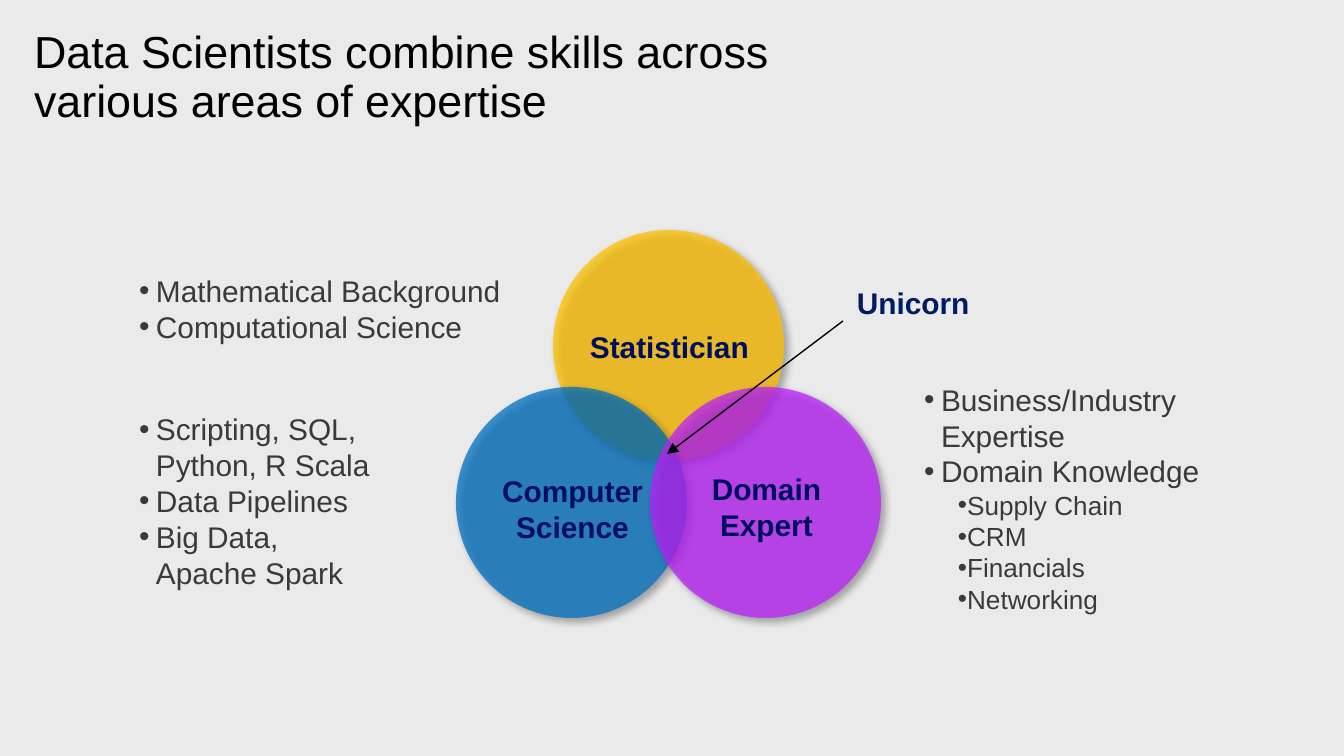
import copy

import pptx
import pptx.dml.color
import pptx.enum.shapes
import pptx.enum.text
import pptx.oxml
import pptx.oxml.ns
import pptx.util
from lxml import etree

PX = 914400 / 134.4
RGBColor = pptx.dml.color.RGBColor
BACKGROUND = RGBColor(0xEA, 0xEA, 0xEA)
BLACK = RGBColor(0x00, 0x00, 0x00)
GREY = RGBColor(0x3A, 0x3A, 0x3A)
NAVY = RGBColor(0x00, 0x0E, 0x5E)
UNICORN_BLUE = RGBColor(0x00, 0x1D, 0x64)
YELLOW = RGBColor(0xFF, 0xC0, 0x00)
BLUE = RGBColor(0x00, 0x70, 0xC0)
PURPLE = RGBColor(0xBA, 0x22, 0xFB)

LEFT = pptx.enum.text.PP_ALIGN.LEFT
CENTER = pptx.enum.text.PP_ALIGN.CENTER
TOP = pptx.enum.text.MSO_ANCHOR.TOP
MIDDLE = pptx.enum.text.MSO_ANCHOR.MIDDLE

MATHEMATICS = [(0, "Mathematical Background"), (0, "Computational Science")]
COMPUTING = [
    (0, "Scripting, SQL,\nPython, R Scala"),
    (0, "Data Pipelines"),
    (0, "Big Data,\nApache Spark"),
]
BUSINESS = [
    (0, "Business/Industry\nExpertise"),
    (0, "Domain Knowledge"),
    (1, "Supply Chain"),
    (1, "CRM"),
    (1, "Financials"),
    (1, "Networking"),
]


def emu(*lengths):
    return [pptx.util.Emu(round(length * PX)) for length in lengths]


def qn(tag):
    return pptx.oxml.ns.qn(tag)


def place(part, box):
    part.left, part.top, part.width, part.height = emu(*box)


def write(frame, lines, sizes=(16,), color=GREY, bold=False, align=LEFT,
          anchor=MIDDLE, inset=(3, 3), spacing=1.0, bullets=False):
    frame.word_wrap = True
    frame.auto_size = pptx.enum.text.MSO_AUTO_SIZE.NONE
    frame.vertical_anchor = anchor
    frame.margin_left, frame.margin_top = emu(*inset)
    frame.margin_right, frame.margin_bottom = emu(*inset)
    for number, (level, text) in enumerate(lines):
        paragraph = frame.add_paragraph() if number else frame.paragraphs[0]
        paragraph.text = text
        paragraph.level = level
        paragraph.alignment = align
        paragraph.line_spacing = spacing
        paragraph.space_before = paragraph.space_after = pptx.util.Pt(0)
        if bullets:
            properties = paragraph._p.get_or_add_pPr()
            margin, indent = emu(17, 17 if level else -17)
            properties.set("marL", str(margin))
            properties.set("indent", str(indent))
            etree.SubElement(properties, qn("a:buChar"), char="•")
        for run in paragraph.runs:
            run.font.name = "Arial"
            run.font.size = pptx.util.Pt(sizes[level])
            run.font.bold = bold
            run.font.color.rgb = color
        for line_break in paragraph._p.findall(qn("a:br")):
            line_break.append(copy.deepcopy(paragraph.runs[0]._r.rPr))


def add_label(shapes, text, box, **style):
    label = shapes.add_textbox(*emu(*box))
    write(label.text_frame, [(0, line) for line in text.split("\n")], bold=True, **style)


def add_circle(shapes, box, color):
    circle = shapes.add_shape(pptx.enum.shapes.MSO_SHAPE.OVAL, *emu(*box))
    circle.fill.solid()
    circle.fill.fore_color.rgb = color
    circle.line.fill.background()
    circle.shadow.inherit = False
    properties = circle._element.spPr
    fill_color = properties.find(qn("a:solidFill")).find(qn("a:srgbClr"))
    etree.SubElement(fill_color, qn("a:alpha"), val="75000")
    shadow = etree.SubElement(
        properties.find(qn("a:effectLst")), qn("a:outerShdw"),
        blurRad=str(pptx.util.Pt(4)), dist=str(pptx.util.Pt(3)),
        dir="2700000", algn="tl", rotWithShape="0")
    shadow_color = etree.SubElement(shadow, qn("a:srgbClr"), val="000000")
    etree.SubElement(shadow_color, qn("a:alpha"), val="40000")


def add_arrow(shapes, start, end):
    straight = pptx.enum.shapes.MSO_CONNECTOR.STRAIGHT
    arrow = shapes.add_connector(straight, *emu(*start, *end))
    arrow.line.color.rgb = BLACK
    arrow.line.width = pptx.util.Pt(0.75)
    properties = arrow._element.spPr
    etree.SubElement(properties.find(qn("a:ln")), qn("a:tailEnd"), type="triangle")
    etree.SubElement(properties, qn("a:effectLst"))


def add_title(title, box):
    place(title, box)
    write(title.text_frame,
          [(0, "Data Scientists combine skills across various areas of expertise")],
          sizes=(24,), color=BLACK, anchor=TOP, inset=(0, 0), spacing=0.9)


def add_skills(placeholder, skills, box):
    place(placeholder, box)
    write(placeholder.text_frame, skills, sizes=(16, 14), bullets=True)


def add_venn(slide, left, top):
    shapes = slide.shapes.add_group_shape().shapes
    diameter = 231
    fields = [
        ("Statistician", YELLOW, 97, 0, 117),
        ("Computer\nScience", BLUE, 0, 157, 122),
        ("Domain\nExpert", PURPLE, 194, 157, 120),
    ]
    for name, color, x, y, label_y in fields:
        add_circle(shapes, (left + x, top + y, diameter, diameter), color)
        add_label(shapes, name, (left + x + 1, top + y + label_y - 18, diameter, 36),
                  color=NAVY, align=CENTER)
    add_arrow(shapes, (left + 387, top + 91), (left + 211, top + 224))
    add_label(shapes, "Unicorn", (left + 388, top + 48, 167, 50),
              color=UNICORN_BLUE, anchor=TOP, inset=(13, 7))


def main():
    deck = pptx.Presentation()
    deck.slide_width, deck.slide_height = emu(1344, 756)
    slide = deck.slides.add_slide(deck.slide_layouts.get_by_name("Comparison"))
    slide.background.fill.solid()
    slide.background.fill.fore_color.rgb = BACKGROUND

    add_title(slide.shapes.title, (34, 30, 850, 56))
    bodies = [body for body in slide.placeholders if body.placeholder_format.idx in range(1, 5)]
    computing, mathematics, business, unused = bodies
    add_skills(computing, COMPUTING, (136, 468, 484, 65))
    add_skills(mathematics, MATHEMATICS, (136, 250, 534, 117))
    add_skills(business, BUSINESS, (921, 444, 418, 108))
    unused._element.getparent().remove(unused._element)
    add_venn(slide, 456, 230)
    deck.save("out.pptx")


if __name__ == "__main__":
    main()
